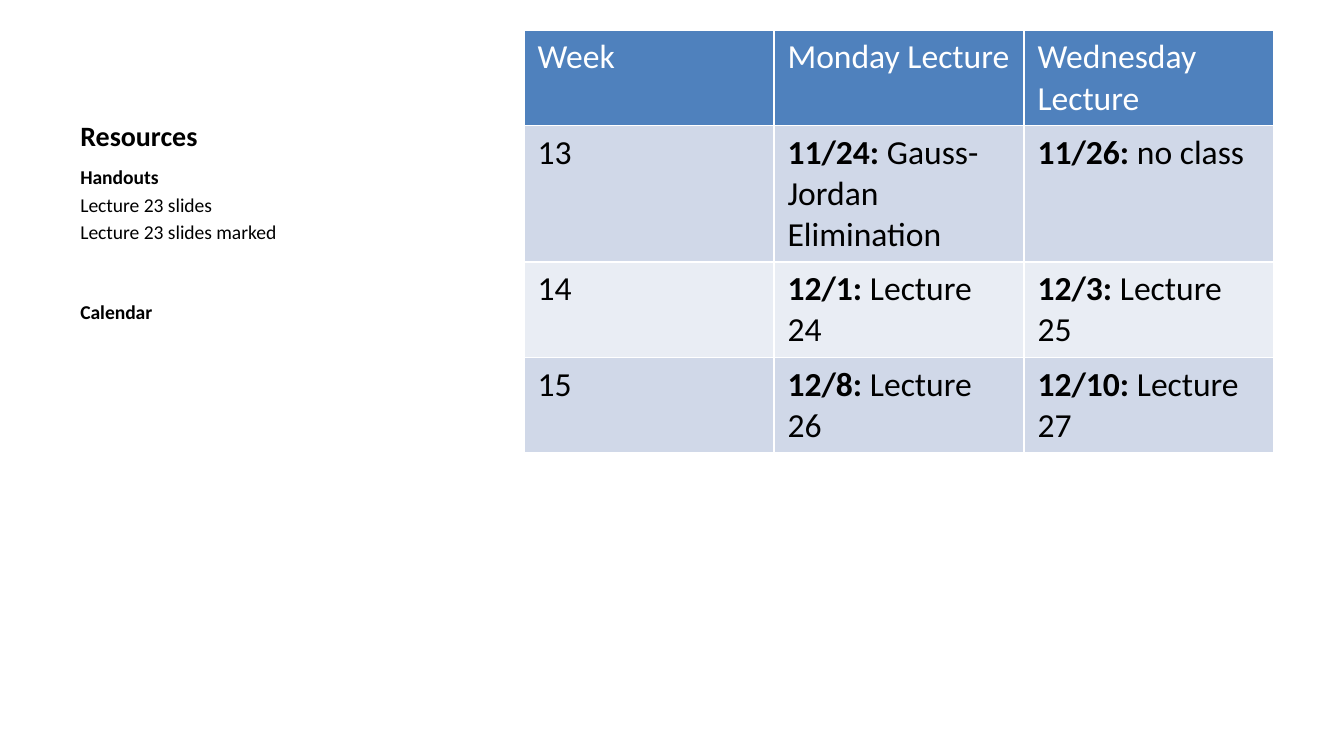
"""Build a course slide with a resource list beside a lecture calendar."""
from dataclasses import dataclass
from typing import Any, NamedTuple

import lxml.etree
import pptx
import pptx.dml.color
import pptx.enum.text
import pptx.oxml.ns
import pptx.util


@dataclass(frozen=True)
class Theme:
    font: str = "Calibri"
    title_size: float = 15
    body_size: float = 10.5
    table_size: float = 18
    text: str = "000000"
    inverse: str = "FFFFFF"
    header: str = "4F81BD"
    bands: tuple[str, str] = ("D0D8E8", "E9EDF4")
    border_width: float = 1


class Area(NamedTuple):
    left: float
    top: float
    width: float
    height: float


class Line(NamedTuple):
    text: str
    bold: bool = False
    space_before: float = 0


class Lecture(NamedTuple):
    date: str
    topic: str


class Week(NamedTuple):
    number: str
    monday: Lecture
    wednesday: Lecture
    text_lines: int = 2


THEME = Theme()
SLIDE_WIDTH = pptx.util.Inches(10)
SLIDE_HEIGHT = SLIDE_WIDTH * 9 // 16
TITLE_AREA = Area(0.05, 0.04, 0.33, 0.17)
RESOURCES_AREA = Area(0.05, 0.21, 0.33, 0.68)
CALENDAR_AREA = Area(0.39, 0.04, 5.58 / 10, 0.56)
LINE_HEIGHT = 0.61 / 2
CELL_PADDING = 0.1
SECTION_GAP = 30
ITEM_GAP = 2.1

RESOURCES = [
    Line("Handouts", bold=True),
    Line("Lecture 23 slides", space_before=ITEM_GAP),
    Line("Lecture 23 slides marked", space_before=ITEM_GAP),
    Line("Calendar", bold=True, space_before=SECTION_GAP),
]
HEADINGS = ["Week", "Monday Lecture", "Wednesday Lecture"]
WEEKS = [
    Week("13", Lecture("11/24:", " Gauss-Jordan Elimination"), Lecture("11/26:", " no class"), 3),
    Week("14", Lecture("12/1:", " Lecture 24"), Lecture("12/3:", " Lecture 25")),
    Week("15", Lecture("12/8:", " Lecture 26"), Lecture("12/10:", " Lecture 27")),
]


def place(area: Area) -> tuple[int, int, int, int]:
    return (
        round(area.left * SLIDE_WIDTH),
        round(area.top * SLIDE_HEIGHT),
        round(area.width * SLIDE_WIDTH),
        round(area.height * SLIDE_HEIGHT),
    )


def add_text(paragraph: Any, text: str, *, size: float, color: str = THEME.text, bold: bool = False) -> None:
    run = paragraph.add_run()
    run.text = text
    run.font.name = THEME.font
    run.font.size = pptx.util.Pt(size)
    run.font.bold = bold
    run.font.color.rgb = pptx.dml.color.RGBColor.from_string(color)


def add_text_box(slide: Any, area: Area, lines: list[Line], size: float, anchor: Any) -> None:
    frame = slide.shapes.add_textbox(*place(area)).text_frame
    frame.word_wrap = True
    frame.vertical_anchor = anchor
    for index, line in enumerate(lines):
        paragraph = frame.add_paragraph() if index else frame.paragraphs[0]
        paragraph.space_before = pptx.util.Pt(line.space_before)
        add_text(paragraph, line.text, size=size, bold=line.bold)


def style_cell(cell: Any, fill: str) -> None:
    properties = cell._tc.get_or_add_tcPr()
    qualified = pptx.oxml.ns.qn
    for side in ("a:lnL", "a:lnR", "a:lnT", "a:lnB"):
        border = lxml.etree.SubElement(properties, qualified(side), w=str(pptx.util.Pt(THEME.border_width)))
        solid = lxml.etree.SubElement(border, qualified("a:solidFill"))
        lxml.etree.SubElement(solid, qualified("a:srgbClr"), val=THEME.inverse)
    cell.fill.solid()
    cell.fill.fore_color.rgb = pptx.dml.color.RGBColor.from_string(fill)


def add_calendar(slide: Any, area: Area, weeks: list[Week]) -> None:
    table = slide.shapes.add_table(len(weeks) + 1, len(HEADINGS), *place(area)).table
    for row, text_lines in zip(table.rows, [2] + [week.text_lines for week in weeks]):
        row.height = pptx.util.Inches(text_lines * LINE_HEIGHT + CELL_PADDING)
    for column, heading in enumerate(HEADINGS):
        cell = table.cell(0, column)
        style_cell(cell, THEME.header)
        add_text(cell.text_frame.paragraphs[0], heading, size=THEME.table_size, color=THEME.inverse)
    for index, week in enumerate(weeks):
        entries = [Lecture("", week.number), week.monday, week.wednesday]
        for column, lecture in enumerate(entries):
            cell = table.cell(index + 1, column)
            style_cell(cell, THEME.bands[index % 2])
            paragraph = cell.text_frame.paragraphs[0]
            if lecture.date:
                add_text(paragraph, lecture.date, size=THEME.table_size, bold=True)
            add_text(paragraph, lecture.topic, size=THEME.table_size)


def main() -> None:
    presentation = pptx.Presentation()
    presentation.slide_width = SLIDE_WIDTH
    presentation.slide_height = SLIDE_HEIGHT
    slide = presentation.slides.add_slide(presentation.slide_layouts[6])
    anchors = pptx.enum.text.MSO_ANCHOR
    add_text_box(slide, TITLE_AREA, [Line("Resources", bold=True)], THEME.title_size, anchors.BOTTOM)
    add_text_box(slide, RESOURCES_AREA, RESOURCES, THEME.body_size, anchors.TOP)
    add_calendar(slide, CALENDAR_AREA, WEEKS)
    presentation.save("out.pptx")


if __name__ == "__main__":
    main()
